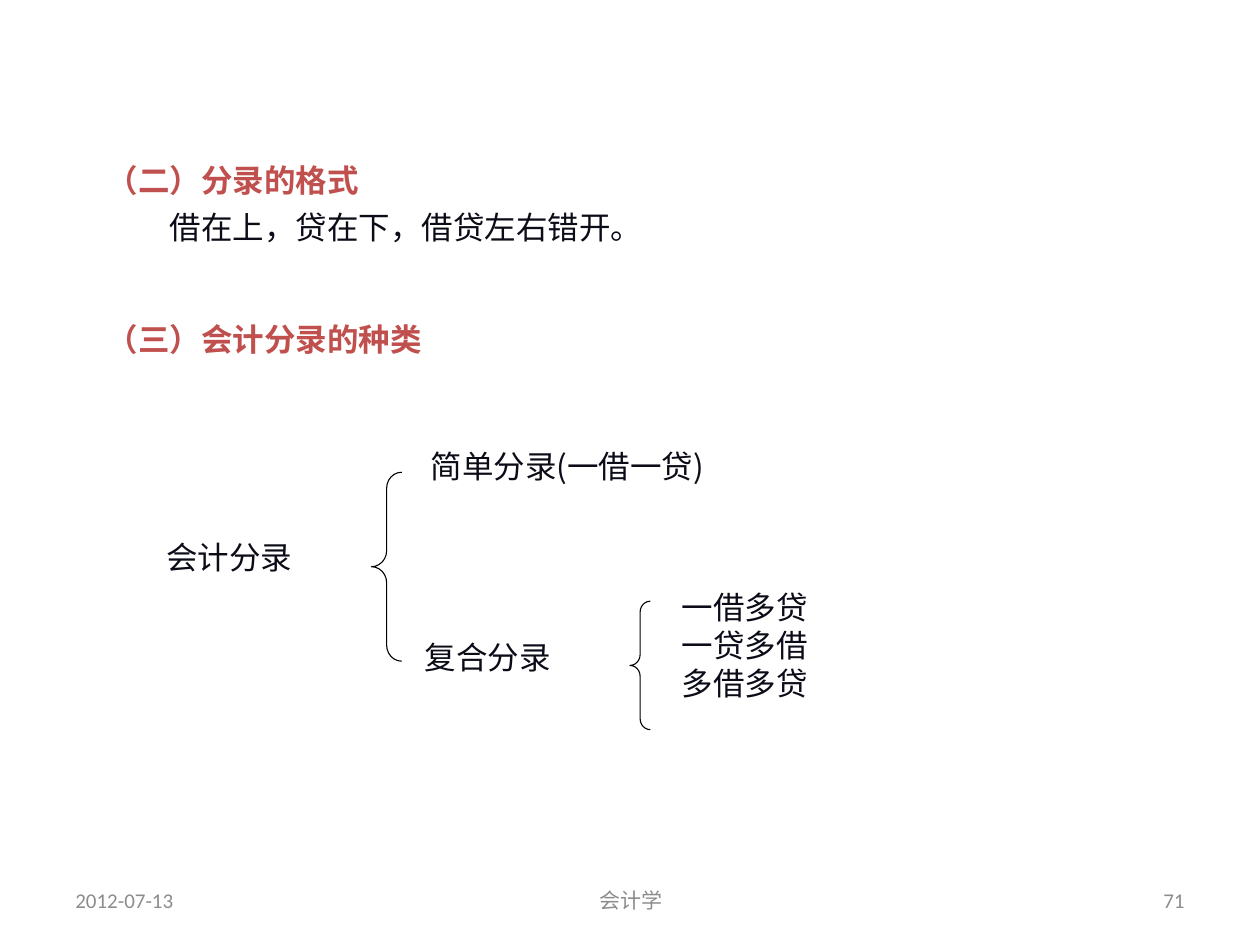
from pptx import Presentation
from pptx.dml.color import RGBColor
from pptx.enum.shapes import MSO_SHAPE
from pptx.enum.text import MSO_ANCHOR, PP_ALIGN
from pptx.oxml.ns import qn
from pptx.util import Cm, Pt
from lxml.etree import SubElement

HEADING = "C0504D"
BODY = "0B0C17"
FOOTER = "8C8C8C"
CJK_FONT = "Noto Sans CJK SC"


def color(hex_string):
    return RGBColor.from_string(hex_string)


def add_box(slide, left, top, width, height, anchor=MSO_ANCHOR.TOP, wrap=True):
    shape = slide.shapes.add_textbox(Cm(left), Cm(top), Cm(width), Cm(height))
    frame = shape.text_frame
    frame.word_wrap = wrap
    frame.vertical_anchor = anchor
    return frame


def write(paragraph, text, size=18, font="Calibri", fill=BODY, bold=False,
          align=PP_ALIGN.LEFT, before=0, indent=0):
    paragraph.alignment = align
    paragraph.space_before = Pt(before)
    if indent:
        paragraph._p.get_or_add_pPr().set("indent", str(Cm(indent)))
    run = paragraph.add_run()
    run.text = text
    run.font.size = Pt(size)
    run.font.name = font
    run.font.bold = bold
    run.font.color.rgb = color(fill)
    east_asian = SubElement(run._r.get_or_add_rPr(), qn("a:ea"))
    east_asian.set("typeface", "Calibri")


def add_label(slide, left, top, width, height, *lines):
    frame = add_box(slide, left, top, width, height, wrap=False)
    for index, line in enumerate(lines):
        paragraph = frame.add_paragraph() if index else frame.paragraphs[0]
        write(paragraph, line, font=CJK_FONT)


def add_brace(slide, left, top, width, height, curve):
    shape = slide.shapes.add_shape(
        MSO_SHAPE.LEFT_BRACE, Cm(left), Cm(top), Cm(width), Cm(height))
    shape.shadow.inherit = False
    shape.adjustments[0] = curve
    shape.adjustments[1] = 0.5
    shape.fill.background()
    shape.line.color.rgb = color("000000")
    shape.line.width = Pt(0.63)


def add_footer(slide, left, width, text, align):
    frame = add_box(slide, left, 17.65, width, 1.01, anchor=MSO_ANCHOR.MIDDLE)
    write(frame.paragraphs[0], text, size=12, fill=FOOTER, align=align)


def add_sections(slide):
    layout_rules = add_box(slide, 1.9, 3.12, 19.81, 2.59)
    write(layout_rules.paragraphs[0], "（二）分录的格式", fill=HEADING, bold=True)
    write(layout_rules.add_paragraph(), "借在上，贷在下，借贷左右错开。",
          before=5.4, indent=1.27)
    kinds = add_box(slide, 1.9, 6.32, 9.02, 1.27, wrap=False)
    write(kinds.paragraphs[0], "（三）会计分录的种类", fill=HEADING, bold=True)


def add_entry_tree(slide):
    add_label(slide, 3.1, 10.72, 3.89, 1.27, "会计分录")
    add_label(slide, 8.43, 8.89, 8.13, 1.27, "简单分录(一借一贷)")
    add_label(slide, 8.31, 12.73, 3.89, 1.27, "复合分录")
    add_label(slide, 13.49, 11.73, 3.89, 3.3, "一借多贷", "一贷多借", "多借多贷")
    add_brace(slide, 7.49, 9.52, 0.61, 3.81, 0.53)
    add_brace(slide, 12.7, 12.12, 0.41, 2.59, 0.54)


def main():
    presentation = Presentation()
    presentation.slide_width = Cm(25.4)
    presentation.slide_height = Cm(19.05)
    slide = presentation.slides.add_slide(presentation.slide_layouts[6])
    add_footer(slide, 1.27, 5.92, "2012-07-13", PP_ALIGN.LEFT)
    add_footer(slide, 8.69, 8.05, "会计学", PP_ALIGN.CENTER)
    add_footer(slide, 18.21, 5.92, "71", PP_ALIGN.RIGHT)
    add_sections(slide)
    add_entry_tree(slide)
    presentation.save("out.pptx")


if __name__ == "__main__":
    main()
